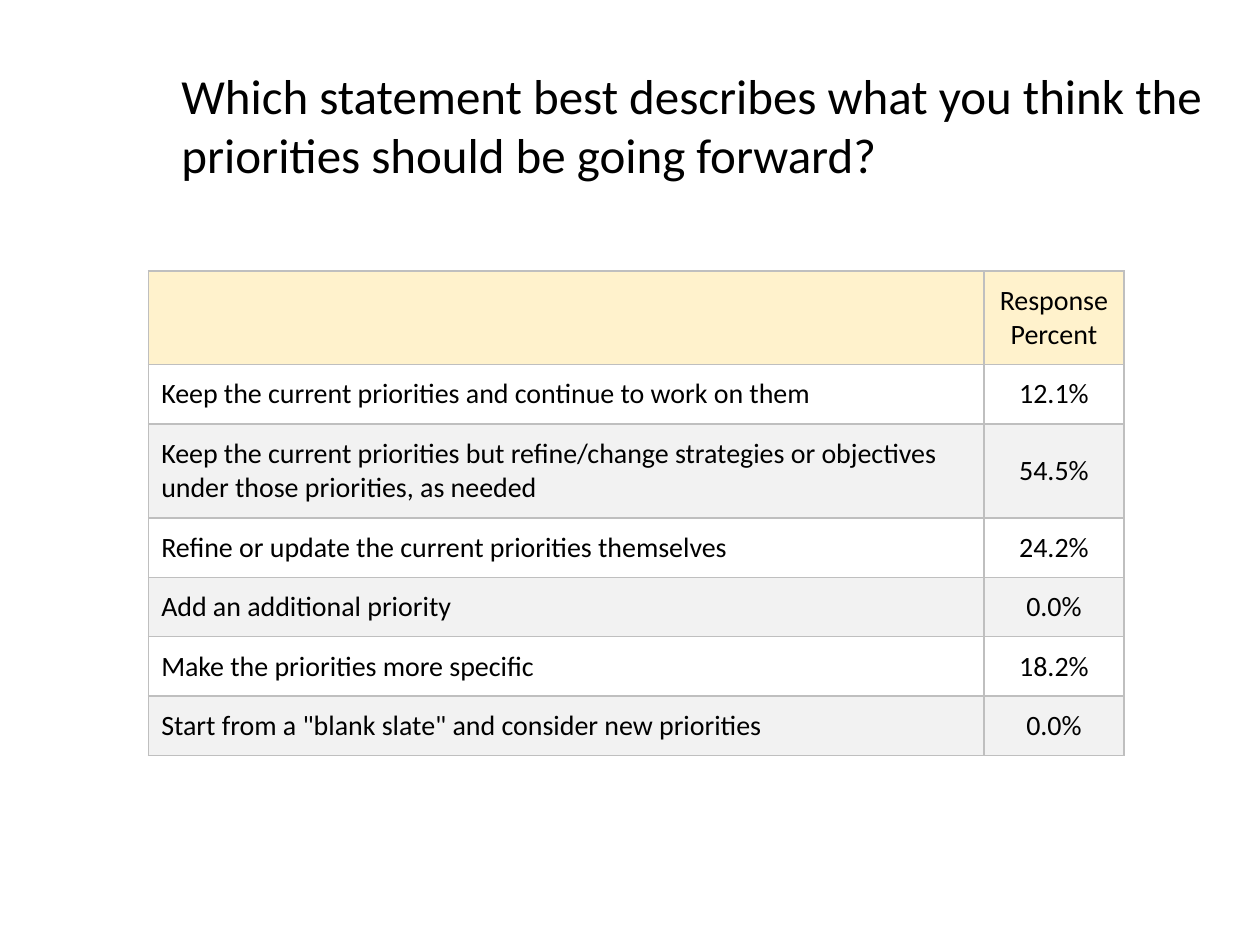
from lxml import etree
from pptx import Presentation
from pptx.dml.color import RGBColor
from pptx.enum.text import MSO_ANCHOR, PP_ALIGN
from pptx.oxml.ns import qn
from pptx.util import Inches, Pt

BLACK = RGBColor(0x00, 0x00, 0x00)
WHITE = RGBColor(0xFF, 0xFF, 0xFF)
CREAM = RGBColor(0xFF, 0xF2, 0xCC)
LIGHT_GREY = RGBColor(0xF2, 0xF2, 0xF2)
BORDER_GREY = RGBColor(0xBF, 0xBF, 0xBF)
FONT = "Calibri"

TITLE = ("Which statement best describes what you think the "
         "priorities should be going forward?")
ROWS = [
    ("", "Response Percent"),
    ("Keep the current priorities and continue to work on them", "12.1%"),
    ("Keep the current priorities but refine/change strategies or objectives "
     "under those priorities, as needed", "54.5%"),
    ("Refine or update the current priorities themselves", "24.2%"),
    ("Add an additional priority", "0.0%"),
    ("Make the priorities more specific", "18.2%"),
    ('Start from a "blank slate" and consider new priorities', "0.0%"),
]
TWO_LINE_ROWS = (0, 2)


def format_paragraph(p, size, align):
    p.alignment = align
    p.font.name = FONT
    p.font.size = Pt(size)
    p.font.color.rgb = BLACK


def add_title(s, left, top, width, height):
    title = s.shapes.title
    title.left, title.top, title.width, title.height = left, top, width, height
    tf = title.text_frame
    tf.text = TITLE
    tf.word_wrap = True
    tf.vertical_anchor = MSO_ANCHOR.TOP
    format_paragraph(tf.paragraphs[0], 28, PP_ALIGN.LEFT)


def add_borders(cell):
    tcPr = cell._tc.get_or_add_tcPr()
    # Border lines must come before the fill
    for i, side in enumerate(("lnL", "lnR", "lnT", "lnB")):
        ln = etree.Element(qn(f"a:{side}"), w=str(Pt(1)))
        fill = etree.SubElement(ln, qn("a:solidFill"))
        etree.SubElement(fill, qn("a:srgbClr"), val=str(BORDER_GREY))
        tcPr.insert(i, ln)


def format_cell(cell, text, color, is_percent):
    cell.text = text
    cell.margin_left = cell.margin_right = Inches(0.1)
    cell.margin_top = cell.margin_bottom = Inches(0.1)
    cell.vertical_anchor = MSO_ANCHOR.MIDDLE if is_percent else MSO_ANCHOR.BOTTOM
    align = PP_ALIGN.CENTER if is_percent else PP_ALIGN.LEFT
    format_paragraph(cell.text_frame.paragraphs[0], 16, align)
    cell.fill.solid()
    cell.fill.fore_color.rgb = color
    add_borders(cell)


def add_response_table(s, left, top, width, height):
    table = s.shapes.add_table(len(ROWS), 2, left, top, width, height).table
    percent_width = Inches(1.11)
    table.columns[0].width = width - percent_width
    table.columns[1].width = percent_width
    for i, row in enumerate(ROWS):
        table.rows[i].height = Inches(0.74 if i in TWO_LINE_ROWS else 0.47)
        # Cream header, then white and grey bands
        color = CREAM if i == 0 else WHITE if i % 2 else LIGHT_GREY
        for j, text in enumerate(row):
            format_cell(table.cell(i, j), text, color, j == 1)


def main():
    prs = Presentation()
    prs.slide_width, prs.slide_height = Inches(10), Inches(7.5)
    s = prs.slides.add_slide(prs.slide_layouts[5])
    add_title(s, Inches(1.34), Inches(0.47), Inches(8.93), Inches(1.63))
    add_response_table(s, Inches(1.18), Inches(2.15), Inches(7.74), Inches(3.8))
    prs.save("out.pptx")


if __name__ == "__main__":
    main()
